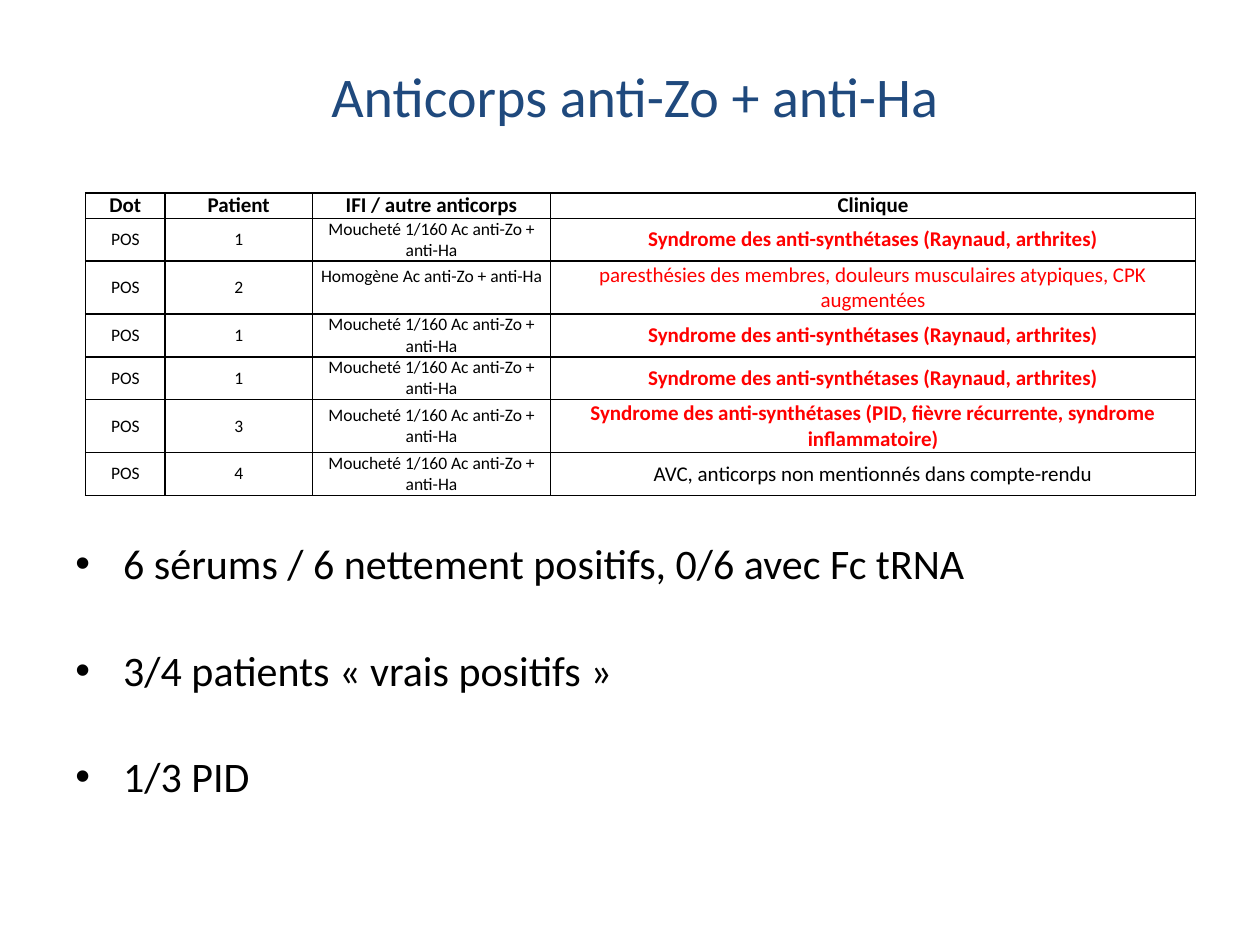
import pptx
import pptx.dml.color
import pptx.enum.text
import pptx.oxml
import pptx.oxml.ns
import pptx.util
from pptx.util import Inches

BLACK = pptx.dml.color.RGBColor(0x00, 0x00, 0x00)
RED = pptx.dml.color.RGBColor(0xFF, 0x00, 0x00)
NAVY = pptx.dml.color.RGBColor(0x1F, 0x49, 0x7D)
CENTER = pptx.enum.text.PP_ALIGN.CENTER
ANCHOR = pptx.enum.text.MSO_ANCHOR
NAMESPACE = pptx.oxml.ns.nsdecls("a")


def write(para, text, size, color, bold=False):
    para.text = text
    para.font.name = "Calibri"
    para.font.size = pptx.util.Pt(size)
    para.font.color.rgb = color
    para.font.bold = bold


def add_borders(cell):
    properties = cell._tc.get_or_add_tcPr()
    for position, side in enumerate(("lnL", "lnR", "lnT", "lnB")):
        properties.insert(position, pptx.oxml.parse_xml(
            f'<a:{side} {NAMESPACE} w="12700"><a:solidFill>'
            f'<a:srgbClr val="{BLACK}"/></a:solidFill></a:{side}>'))


deck = pptx.Presentation()
deck.slide_width = Inches(10)
deck.slide_height = Inches(7.5)
slide = deck.slides.add_slide(deck.slide_layouts[6])

# Results table
SPECKLED = "Moucheté 1/160 Ac anti-Zo + anti-Ha"
SYNDROME = "Syndrome des anti-synthétases (Raynaud, arthrites)"
headings = ("Dot", "Patient", "IFI / autre anticorps", "Clinique")
# Patient, immunofluorescence, clinical picture, its colour and weight, row height
sera = [
    ("1", SPECKLED, SYNDROME, RED, True, 0.34),
    ("2", "Homogène Ac anti-Zo + anti-Ha",
     "paresthésies des membres, douleurs musculaires atypiques, CPK augmentées",
     RED, False, 0.42),
    ("1", SPECKLED, SYNDROME, RED, True, 0.34),
    ("1", SPECKLED, SYNDROME, RED, True, 0.34),
    ("3", SPECKLED,
     "Syndrome des anti-synthétases (PID, fièvre récurrente, syndrome inflammatoire)",
     RED, True, 0.42),
    ("4", SPECKLED, "AVC, anticorps non mentionnés dans compte-rendu",
     BLACK, False, 0.34),
]
column_widths = (0.63, 1.17, 1.89, 5.12)
row_heights = [0.2] + [serum[-1] for serum in sera]

table = slide.shapes.add_table(
    len(row_heights), len(column_widths), Inches(0.68), Inches(1.53),
    Inches(sum(column_widths)), Inches(sum(row_heights))).table
table.first_row = False
table.horz_banding = False
for column, width in zip(table.columns, column_widths):
    column.width = Inches(width)
for row, height in zip(table.rows, row_heights):
    row.height = Inches(height)

for cell in table.iter_cells():
    cell.fill.background()
    add_borders(cell)
    cell.margin_left = cell.margin_right = Inches(0)
    cell.margin_top = cell.margin_bottom = Inches(0)
    cell.vertical_anchor = ANCHOR.MIDDLE
    cell.text_frame.paragraphs[0].alignment = CENTER

for column, heading in enumerate(headings):
    write(table.cell(0, column).text_frame.paragraphs[0], heading, 12, BLACK, True)
for row, (patient, pattern, clinical, color, bold, height) in enumerate(sera, 1):
    for column, text in enumerate(("POS", patient, pattern)):
        write(table.cell(row, column).text_frame.paragraphs[0], text, 10, BLACK)
    write(table.cell(row, 3).text_frame.paragraphs[0], clinical, 12, color, bold)

# The homogeneous pattern sits above the middle of its row
homogeneous = table.cell(2, 2)
homogeneous.vertical_anchor = ANCHOR.TOP
homogeneous.margin_top = Inches(0.04)

# Title
title = slide.shapes.add_textbox(
    Inches(0.54), Inches(0.13), Inches(9), Inches(1.25)).text_frame
title.word_wrap = True
title.vertical_anchor = ANCHOR.MIDDLE
title.paragraphs[0].alignment = CENTER
write(title.paragraphs[0], "Anticorps anti-Zo + anti-Ha", 32, NAVY)

# Conclusions
conclusions = (
    "6 sérums / 6 nettement positifs, 0/6 avec Fc tRNA",
    "3/4 patients « vrais positifs »",
    "1/3 PID",
)
body = slide.shapes.add_textbox(
    Inches(0.5), Inches(4.22), Inches(9), Inches(2.48)).text_frame
body.word_wrap = True
for index, conclusion in enumerate(conclusions):
    para = body.paragraphs[0] if index == 0 else body.add_paragraph()
    write(para, conclusion, 24, BLACK)
    para.space_after = pptx.util.Pt(32)
    properties = para._p.get_or_add_pPr()
    properties.set("marL", str(Inches(0.38)))
    properties.set("indent", str(Inches(-0.38)))
    bullet = pptx.oxml.parse_xml(f'<a:buChar {NAMESPACE} char="•"/>')
    bullet_font = pptx.oxml.parse_xml(f'<a:buFont {NAMESPACE} typeface="Arial"/>')
    properties.find(pptx.oxml.ns.qn("a:defRPr")).addprevious(bullet_font)
    bullet_font.addnext(bullet)

deck.save("out.pptx")
